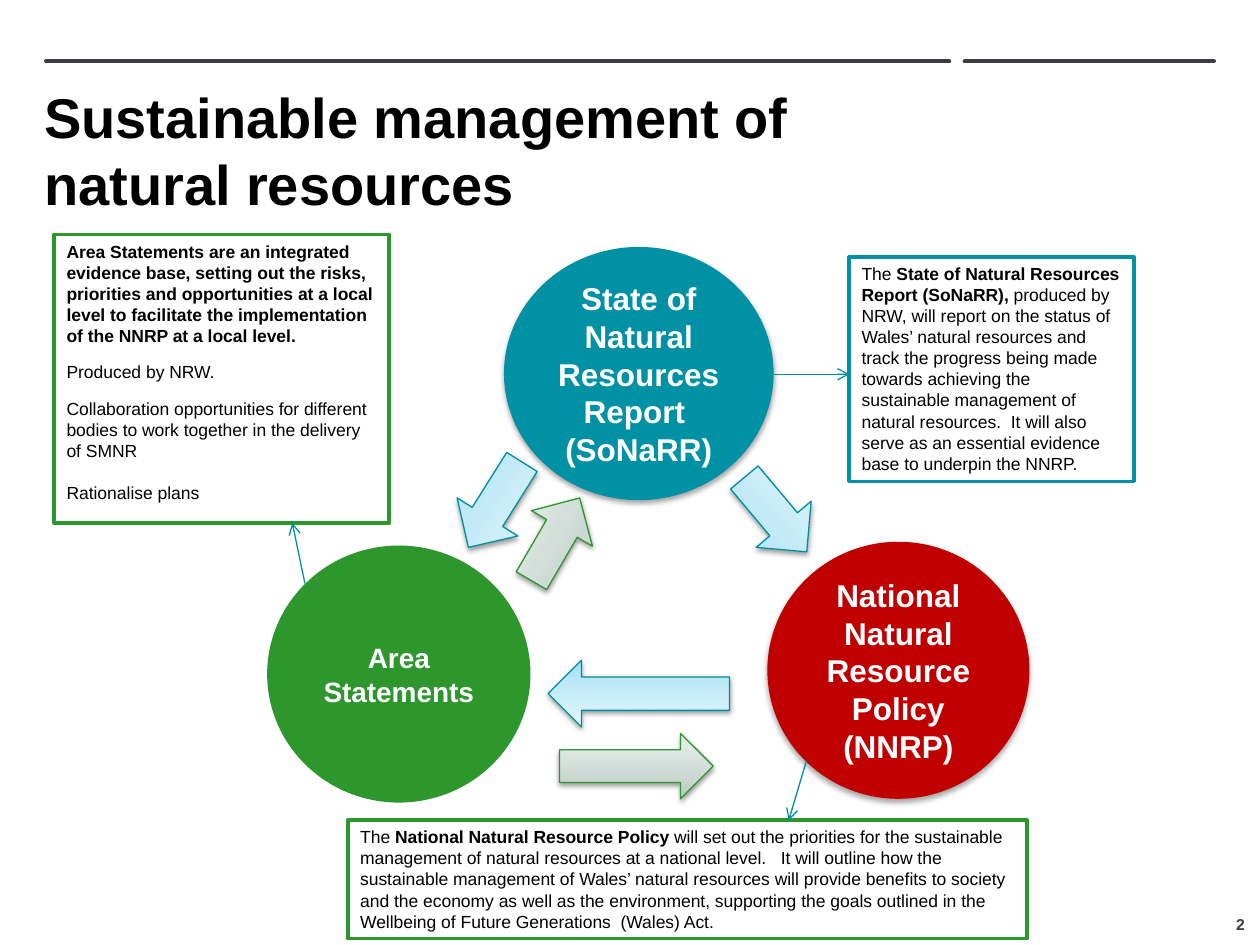
from lxml import etree
from pptx import Presentation
from pptx.dml.color import RGBColor
from pptx.enum.shapes import MSO_CONNECTOR, MSO_SHAPE
from pptx.enum.text import MSO_ANCHOR, MSO_AUTO_SIZE, PP_ALIGN
from pptx.oxml import parse_xml
from pptx.oxml.ns import nsdecls, qn
from pptx.util import Inches, Pt

COLORS = {"black": "000000", "white": "FFFFFF", "bar": "3C3C41", "teal": "0091A5",
          "teal_line": "008EA1", "green": "2D962D", "red": "C00000"}
BLUE_ARROW = (COLORS["teal_line"], ("A1E0F4", "BEE8F6", "E5F7FC"))
GREEN_ARROW = (COLORS["green"], ("B6C9C1", "CCD9D3", "ECF1EF"))
STOPS = (0, 35, 100)


def rgb(name):
    return RGBColor.from_string(COLORS.get(name, name))


def add_text(p, text, size=10, bold=False, color="black"):
    r = p.add_run()
    r.text = text
    r.font.name = "Arial"
    r.font.size = Pt(size)
    r.font.bold = bold
    r.font.color.rgb = rgb(color)


def set_frame(tf, anchor, inset=None):
    tf.word_wrap = True
    tf.auto_size = MSO_AUTO_SIZE.NONE
    tf.vertical_anchor = anchor
    if inset is not None:
        tf.margin_left = tf.margin_right = tf.margin_top = tf.margin_bottom = inset


def add_box(s, kind, box, fill=None, line=None, width=0.75):
    sp = s.shapes.add_shape(kind, *map(Inches, box))
    sp.shadow.inherit = False
    if fill:
        sp.fill.solid()
        sp.fill.fore_color.rgb = rgb(fill)
    if line:
        sp.line.color.rgb = rgb(line)
        sp.line.width = Pt(width)
    else:
        sp.line.fill.background()
    return sp


def add_shadow(sp, alpha, distance):
    effects = sp._element.spPr.find(qn("a:effectLst"))
    effects.append(parse_xml(
        f'<a:outerShdw {nsdecls("a")} blurRad="{Pt(3.1)}" dist="{Pt(distance)}" '
        f'dir="5400000" rotWithShape="0"><a:srgbClr val="{COLORS["black"]}">'
        f'<a:alpha val="{alpha * 1000}"/></a:srgbClr></a:outerShdw>'))


def add_circle(s, box, fill, lines, size, shadow=True):
    sp = add_box(s, MSO_SHAPE.FLOWCHART_CONNECTOR, box, fill)
    if shadow:
        add_shadow(sp, 35, 1.8)
    tf = sp.text_frame
    set_frame(tf, MSO_ANCHOR.MIDDLE)
    for i, text in enumerate(lines):
        p = tf.add_paragraph() if i else tf.paragraphs[0]
        p.alignment = PP_ALIGN.CENTER
        add_text(p, text, size=size, bold=True, color="white")


def add_block_arrow(s, box, style, rotation=0):
    line, shades = style
    sp = add_box(s, MSO_SHAPE.RIGHT_ARROW, box, line=line)
    sp.rotation = rotation
    stops = "".join(f'<a:gs pos="{pos * 1000}"><a:srgbClr val="{shade}"/></a:gs>'
                    for pos, shade in zip(STOPS, shades))
    sp._element.spPr.find(qn("a:prstGeom")).addnext(parse_xml(
        f'<a:gradFill {nsdecls("a")} rotWithShape="1"><a:gsLst>{stops}</a:gsLst>'
        '<a:lin ang="16200000" scaled="0"/></a:gradFill>'))
    add_shadow(sp, 38, 1.6)


def add_note(s, box, line, paragraphs):
    """Each paragraph is (space around in points, [(text, bold), ...])."""
    tf = add_box(s, MSO_SHAPE.RECTANGLE, box, "white", line, 2).text_frame
    set_frame(tf, MSO_ANCHOR.TOP)
    for i, (space, runs) in enumerate(paragraphs):
        p = tf.add_paragraph() if i else tf.paragraphs[0]
        p.alignment = PP_ALIGN.LEFT
        p.space_before = Pt(space if i else 0)
        p.space_after = Pt(space)
        for text, bold in runs:
            add_text(p, text, bold=bold)


def add_pointer(s, start, end):
    c = s.shapes.add_connector(MSO_CONNECTOR.STRAIGHT, *map(Inches, start + end))
    c.line.color.rgb = rgb("teal_line")
    c.line.width = Pt(0.75)
    etree.SubElement(c.line._get_or_add_ln(), qn("a:tailEnd"), type="arrow")
    etree.SubElement(c._element.spPr, qn("a:effectLst"))


def add_header(s, left, top, width, bar_width):
    # Rules above the title
    for x, w in ((left, bar_width), (left + width - 2.01, 2.01)):
        bar = add_box(s, MSO_SHAPE.ROUNDED_RECTANGLE, (x, top, w, 0.03), "bar")
        bar.adjustments[0] = 0.5
    # Title
    title = s.shapes.title
    title.left, title.top = Inches(left), Inches(top + 0.05)
    title.width, title.height = Inches(bar_width), Inches(1.34)
    set_frame(title.text_frame, MSO_ANCHOR.MIDDLE, 0)
    p = title.text_frame.paragraphs[0]
    p.alignment = PP_ALIGN.LEFT
    add_text(p, "Sustainable management of natural resources", size=32, bold=True)


def add_cycle(s):
    add_circle(s, (4, 1.96, 2.14, 2.01), "teal",
               ["State of Natural Resources Report ", "(SoNaRR)"], 18)
    add_circle(s, (2.12, 4.33, 2.09, 2.04), "green", ["Area Statements"], 16, shadow=False)
    add_circle(s, (6.09, 4.3, 2.08, 2.04), "red",
               ["National Natural Resource Policy (NNRP)"], 18)
    for box, style, rotation in (
            ((4.03, 4, 0.76, 0.56), GREEN_ARROW, 300.2),
            ((3.53, 3.72, 0.8, 0.57), BLUE_ARROW, 122.1),
            ((5.77, 3.8, 0.77, 0.57), BLUE_ARROW, 50),
            ((4.35, 5.24, 1.44, 0.53), BLUE_ARROW, 180),
            ((4.44, 5.82, 1.22, 0.52), GREEN_ARROW, 0)):
        add_block_arrow(s, box, style, rotation)


def add_notes(s):
    add_note(s, (0.43, 1.86, 2.66, 2.29), "green", [
        (6, [("Area Statements are an integrated evidence base, setting out the risks, "
              "priorities and opportunities at a local level to facilitate the "
              "implementation of the NNRP at a local level.", True)]),
        (3, [("Produced by NRW.", False)]),
        (6, [("Collaboration opportunities for different bodies to work together in "
              "the delivery of SMNR", False)]),
        (6, [("Rationalise plans", False)])])
    add_note(s, (6.74, 2.04, 2.26, 1.78), "teal", [
        (6, [("The ", False), ("State of Natural Resources Report (SoNaRR), ", True),
             ("produced by NRW, will report on the status of Wales’ natural resources "
              "and track the progress being made towards achieving the sustainable "
              "management of natural resources.  It will also serve as an essential "
              "evidence base to underpin the NNRP.", False)])])
    add_note(s, (2.76, 6.51, 5.39, 0.94), "green", [
        (3, [("The ", False), ("National Natural Resource Policy ", True),
             ("will set out the priorities for the sustainable management of natural "
              "resources at a national level.   It will outline how the sustainable "
              "management of Wales’ natural resources will provide benefits to society "
              "and the economy as well as the environment, supporting the goals outlined "
              "in the Wellbeing of Future Generations  (Wales) Act.", False)])])
    # Pointers from each circle to its note
    for start, end in (((2.42, 4.63), (2.32, 4.15)),
                       ((6.14, 2.97), (6.74, 2.97)),
                       ((6.4, 6.04), (6.26, 6.51))):
        add_pointer(s, start, end)


def add_page_number(s, box):
    tf = s.shapes.add_textbox(*map(Inches, box)).text_frame
    set_frame(tf, MSO_ANCHOR.BOTTOM, 0)
    p = tf.paragraphs[0]
    p.alignment = PP_ALIGN.RIGHT
    add_text(p, "2", size=9, bold=True, color="bar")


def main():
    prs = Presentation()
    prs.slide_width, prs.slide_height = Inches(10), Inches(7.5)
    s = prs.slides.add_slide(prs.slide_layouts[5])
    add_header(s, 0.35, 0.47, 9.3, 7.2)
    add_cycle(s)
    add_notes(s)
    add_page_number(s, (7.55, 7.01, 2.33, 0.4))
    prs.save("out.pptx")


if __name__ == "__main__":
    main()
